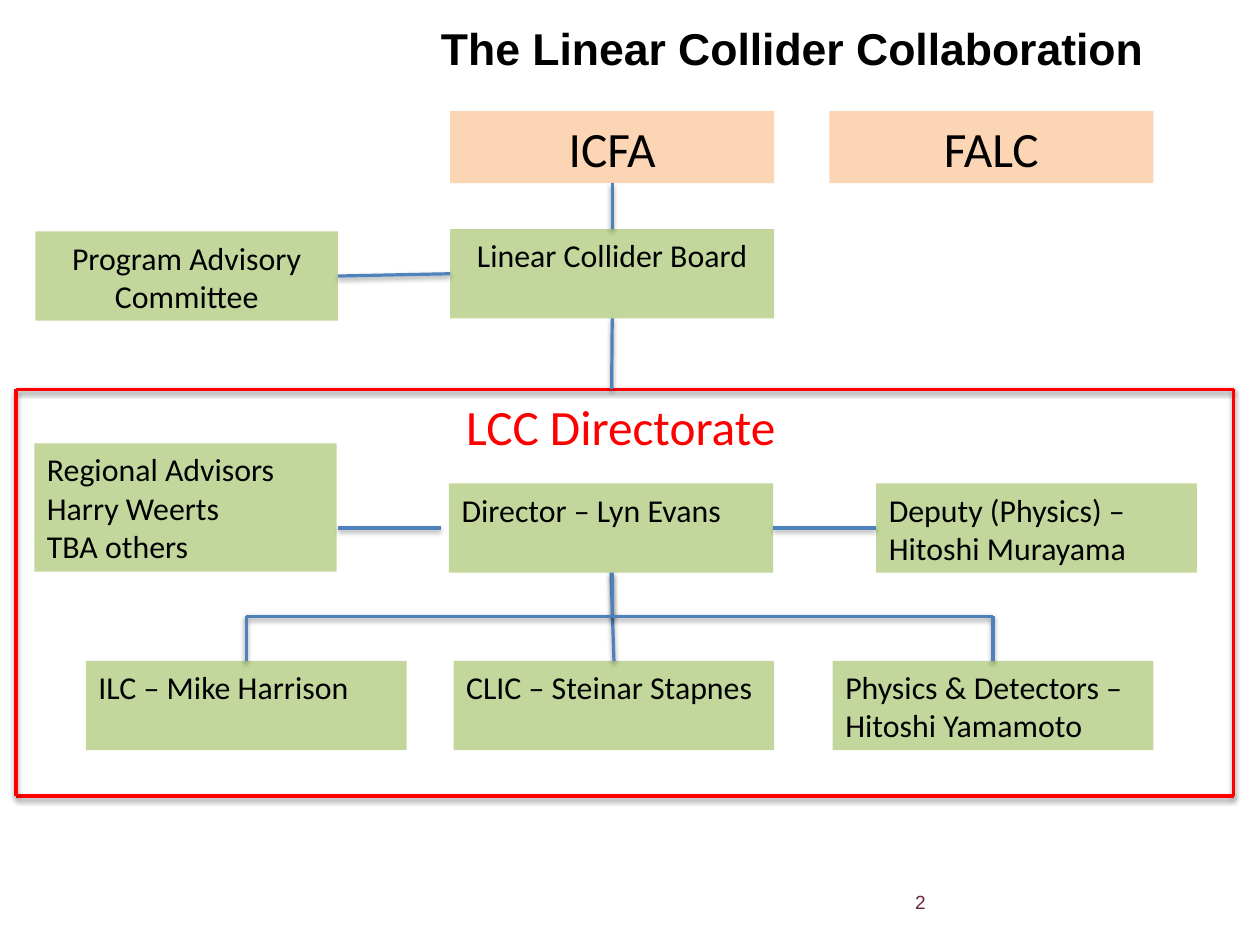
from lxml import etree
from pptx import Presentation
from pptx.dml.color import RGBColor
from pptx.enum.shapes import MSO_CONNECTOR, MSO_SHAPE
from pptx.enum.text import MSO_ANCHOR, MSO_AUTO_SIZE, PP_ALIGN
from pptx.oxml.ns import qn
from pptx.util import Inches, Pt

RECTANGLE = MSO_SHAPE.RECTANGLE
STRAIGHT = MSO_CONNECTOR.STRAIGHT
LEFT, CENTER = PP_ALIGN.LEFT, PP_ALIGN.CENTER
TOP_ANCHOR, MIDDLE_ANCHOR = MSO_ANCHOR.TOP, MSO_ANCHOR.MIDDLE
GROW, FIXED = MSO_AUTO_SIZE.SHAPE_TO_FIT_TEXT, MSO_AUTO_SIZE.NONE
TOP, WEST, BOTTOM, EAST = range(4)

BLACK, RED, BLUE = "000000", "FF0000", "4F81BD"
PEACH, GREEN, MAROON = "FCD5B5", "C3D69B", "692A36"


def color(hex_string):
    return RGBColor.from_string(hex_string)


def write(shape, text, size=20, font="Calibri", ink=BLACK, bold=False, align=LEFT,
          anchor=TOP_ANCHOR, margins=(0.11, 0.06), wrap=True, fit=GROW):
    """Fill a shape with text, one paragraph per line."""
    frame = shape.text_frame
    frame.word_wrap = wrap
    frame.auto_size = fit
    frame.vertical_anchor = anchor
    frame.margin_left = frame.margin_right = Inches(margins[0])
    frame.margin_top = frame.margin_bottom = Inches(margins[1])
    frame.text = text
    for paragraph in frame.paragraphs:
        paragraph.alignment = align
        paragraph.font.size = Pt(size)
        paragraph.font.name = font
        paragraph.font.bold = bold
        paragraph.font.color.rgb = color(ink)


def add_label(slide, box, text, **style):
    label = slide.shapes.add_textbox(*map(Inches, box))
    write(label, text, **style)


def add_unit(slide, box, text, fill=GREEN, **style):
    unit = slide.shapes.add_shape(RECTANGLE, *map(Inches, box))
    unit.shadow.inherit = False
    unit.fill.solid()
    unit.fill.fore_color.rgb = color(fill)
    unit.line.fill.background()
    write(unit, text, **style)
    return unit


def add_link(slide, start, end, ink=BLUE, begin=None, finish=None):
    """Draw a shadowed line; begin and finish are (unit, side) joins."""
    link = slide.shapes.add_connector(STRAIGHT, *map(Inches, start + end))
    if begin:
        link.begin_connect(*begin)
    if finish:
        link.end_connect(*finish)
    link.line.color.rgb = color(ink)
    link.line.width = Pt(2)
    properties = link.line._ln.getparent()
    effects = etree.SubElement(properties, qn("a:effectLst"))
    shadow = etree.SubElement(effects, qn("a:outerShdw"), blurRad="40000",
                              dist="20000", dir="5400000", rotWithShape="0")
    shade = etree.SubElement(shadow, qn("a:srgbClr"), val=BLACK)
    etree.SubElement(shade, qn("a:alpha"), val="38000")


def add_oversight(slide, left, top):
    """Committees above the directorate; returns the board."""
    column = left + 3.62
    icfa, _ = [add_unit(slide, (x, top, 2.83, 0.63), name, PEACH, size=31, align=CENTER)
               for x, name in ((column, "ICFA"), (column + 3.31, "FALC"))]
    board = add_unit(slide, (column, top + 1.03, 2.83, 0.78),
                     "Linear Collider Board", align=CENTER)
    advisory = add_unit(slide, (left, top + 1.05, 2.64, 0.78),
                        "Program Advisory Committee", align=CENTER)
    add_link(slide, (5.34, 1.6), (5.34, 2), begin=(icfa, BOTTOM), finish=(board, TOP))
    add_link(slide, (2.95, 2.41), (3.93, 2.39), begin=(advisory, EAST), finish=(board, WEST))
    return board


def add_directorate(slide, left, top, width, height):
    """Red frame with the director, advisors, deputy and three branches."""
    right, bottom = left + width, top + height
    corners = [(left, top), (right, top), (right, bottom), (left, bottom)]
    for start, end in zip(corners, corners[1:] + corners[:1]):
        add_link(slide, start, end, RED)
    add_label(slide, (left + 3.82, top, 2.93, 0.63), "LCC Directorate",
              size=31, ink=RED, wrap=False)

    # Director's row
    row = top + 0.82
    middle = row + 0.39
    add_unit(slide, (left + 0.16, top + 0.47, 2.64, 1.12),
             "Regional Advisors\nHarry Weerts\nTBA others")
    director = add_unit(slide, (left + 3.78, row, 2.83, 0.78), "Director – Lyn Evans")
    deputy = add_unit(slide, (left + 7.51, row, 2.8, 0.78),
                      "Deputy (Physics) –\nHitoshi Murayama")
    add_link(slide, (left + 2.81, middle), (left + 3.71, middle))
    add_link(slide, (6.75, middle), (7.65, middle),
             begin=(director, EAST), finish=(deputy, WEST))

    # Branches hang from one horizontal bus
    branch_top, bus = top + 2.37, top + 1.98
    branches = []
    for x, name in ((0.61, "ILC – Mike Harrison"), (3.82, "CLIC – Steinar Stapnes"),
                    (7.13, "Physics & Detectors – Hitoshi Yamamoto")):
        branches.append(add_unit(slide, (left + x, branch_top, 2.8, 0.78), name))
    ilc, clic, physics = branches
    trunk = left + 5.21
    add_link(slide, (trunk, row + 0.78), (trunk, branch_top),
             begin=(director, BOTTOM), finish=(clic, TOP))
    add_link(slide, (trunk, row + 0.78), (trunk, bus))
    for branch, x in ((ilc, left + 2.01), (physics, left + 8.53)):
        add_link(slide, (x, bus), (trunk, bus))
        add_link(slide, (x, bus), (x, branch_top), finish=(branch, TOP))


def main():
    deck = Presentation()
    deck.slide_width, deck.slide_height = Inches(11), Inches(8.25)
    slide = deck.slides.add_slide(deck.slide_layouts[6])

    add_label(slide, (3.85, 0.18, 7.15, 0.6), "The Linear Collider Collaboration",
              size=28, font="Arial", bold=True, margins=(0, 0), fit=FIXED)
    board = add_oversight(slide, 0.31, 0.97)
    add_directorate(slide, 0.14, 3.4, 10.63, 3.55)
    add_link(slide, (5.34, 2.78), (5.34, 3.4), begin=(board, BOTTOM))
    add_label(slide, (7.88, 7.65, 2.57, 0.44), "2", size=12, font="Arial",
              ink=MAROON, anchor=MIDDLE_ANCHOR, fit=FIXED)

    deck.save("out.pptx")


if __name__ == "__main__":
    main()
